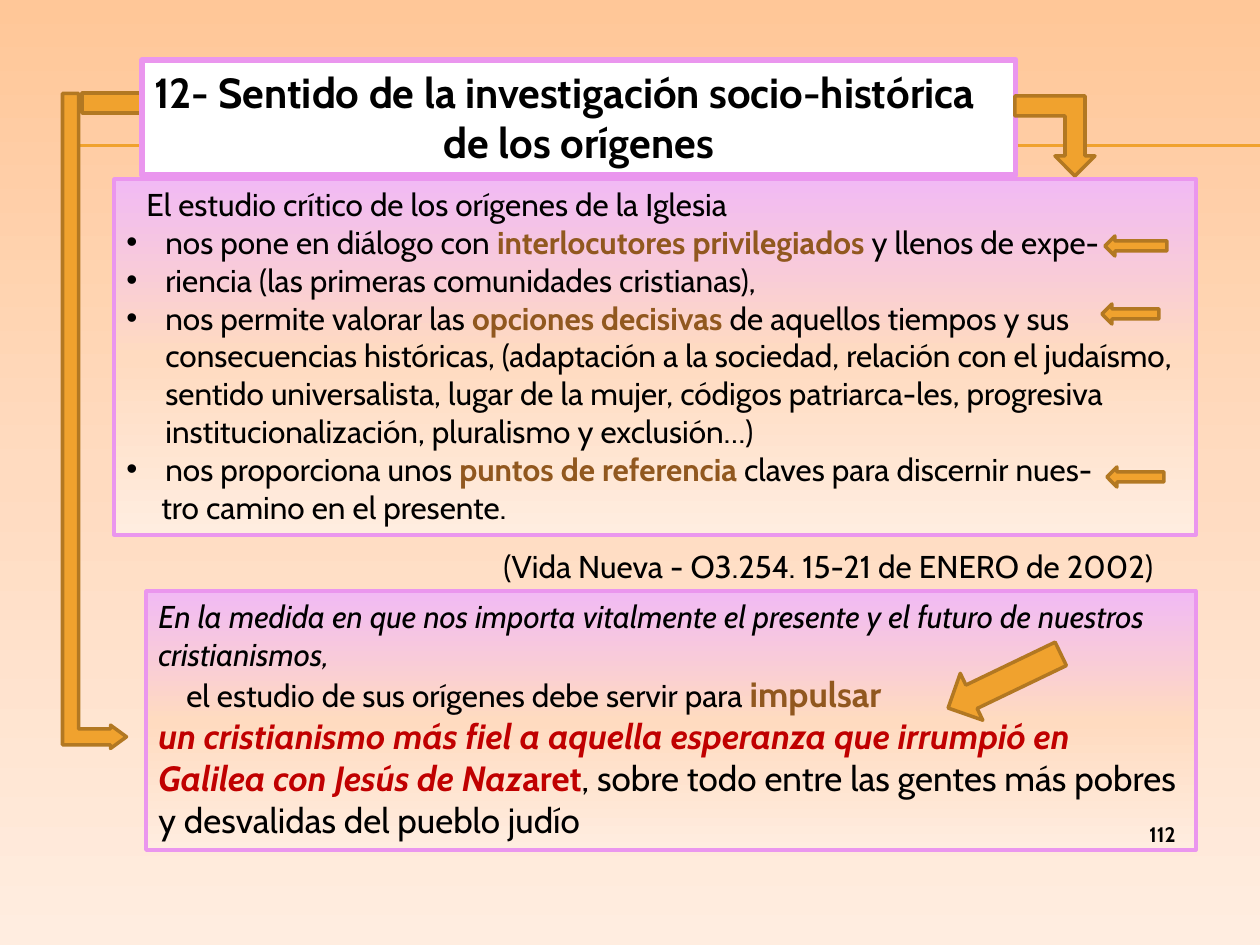
from copy import deepcopy
from dataclasses import dataclass

from lxml import etree
from pptx import Presentation
from pptx.dml.color import RGBColor
from pptx.enum.shapes import MSO_CONNECTOR, MSO_SHAPE
from pptx.enum.text import MSO_ANCHOR, PP_ALIGN
from pptx.oxml.ns import qn
from pptx.util import Pt

PX = 914400 // 126
RECT, LEFT = MSO_SHAPE.RECTANGLE, MSO_SHAPE.LEFT_ARROW
BENT, BENT_UP = MSO_SHAPE.BENT_ARROW, MSO_SHAPE.BENT_UP_ARROW
STRAIGHT = MSO_CONNECTOR.STRAIGHT
START, MIDDLE, END = PP_ALIGN.LEFT, PP_ALIGN.CENTER, PP_ALIGN.RIGHT
TOP = MSO_ANCHOR.TOP
FONT = "Cabin"
COLORS = {
    "ink": "000000", "white": "FFFFFF", "brown": "91581F", "red": "C00000",
    "gold": "F0A22E", "bronze": "B27822", "pink": "EA96EE",
}
PAGE = ("FFC798", "FFDBC0", "FFEDE0")
PANEL = ("F1BAF4", "FFDBC0", "FFEDE0")


@dataclass
class Arrow:
    kind: int
    box: tuple[int, int, int, int]
    turn: float = 0
    adjust: tuple[float, ...] = ()


@dataclass
class Para:
    runs: list[tuple[str, dict]]
    align: int = START
    indent: int = 0
    bullet: bool = False


ARROWS = [
    Arrow(BENT_UP, (-233, 389, 655, 64), 90, (0.25, 0.182, 0.25)),
    Arrow(BENT, (1015, 96, 80, 80), 90, (0.25, 0.25, 0.25, 0)),
    Arrow(LEFT, (1105, 236, 62, 20)),
    Arrow(LEFT, (1102, 304, 57, 20)),
    Arrow(LEFT, (1107, 467, 57, 20)),
    Arrow(LEFT, (942, 655, 125, 52), 334.3),
]

KEY = {"color": "brown", "bold": True}
TITLE = {"size": 24, "bold": True}
HOPE = {"size": 20, "color": "red", "bold": True}


def point(*runs: tuple[str, dict]) -> Para:
    return Para(list(runs), indent=39, bullet=True)


STUDY = [
    Para([("El estudio crítico de los orígenes de la Iglesia", {})], indent=20),
    point(("nos pone en diálogo con ", {}),
          ("interlocutores privilegiados ", KEY),
          ("y llenos de expe-", {})),
    point(("riencia (las primeras comunidades cristianas),", {})),
    point(("nos permite valorar las ", {}),
          ("opciones decisivas ", KEY),
          ("de aquellos tiempos y sus consecuencias históricas, (adaptación "
           "a la sociedad, relación con el judaísmo, sentido universalista, "
           "lugar de la mujer, códigos patriarca-les, progresiva "
           "institucionalización, pluralismo y exclusión…)", {})),
    point(("nos proporciona unos ", {}),
          ("puntos de referencia ", KEY),
          ("claves para discernir nues-", {})),
    Para([("tro camino en el presente.", {})], indent=35),
]
CLOSING = [
    Para([("En la medida en que nos importa vitalmente el presente y el futuro "
           "de nuestros cristianismos,", {"italic": True})]),
    Para([("el estudio de sus orígenes debe servir para ", {}),
          ("impulsar", KEY | {"size": 20})], indent=28),
    Para([("un cristianismo más fiel a aquella esperanza que irrumpió en "
           "Galilea con Jesús de Naz", HOPE | {"italic": True}),
          ("aret", HOPE),
          (", sobre todo entre las gentes más pobres y desvalidas del pueblo "
           "judío", {"size": 20})]),
]
HEADING = [
    Para([("12- Sentido de la investigación socio-histórica", TITLE)]),
    Para([("de los orígenes", TITLE)], MIDDLE),
]
SOURCE = [Para([("(Vida Nueva - O3.254. 15-21 de ENERO de 2002)", {})])]
NUMBER = [Para([("112", {"size": 12, "bold": True})], END)]


def rgb(name: str) -> RGBColor:
    return RGBColor.from_string(COLORS[name])


def scale(box: tuple[int, ...]) -> list[int]:
    return [n * PX for n in box]


def shade(fill, stops: tuple[str, str, str]) -> None:
    """Fill from top to bottom through three evenly spaced colours."""
    fill.gradient()
    fill.gradient_angle = 270
    first = fill.gradient_stops[0]._gs
    first.addnext(deepcopy(first))
    for n, (stop, color) in enumerate(zip(fill.gradient_stops, stops)):
        stop.position = n / 2
        stop.color.rgb = RGBColor.from_string(color)


def add_run(para, text: str, *, size: int = 18, color: str = "ink",
            bold: bool = False, italic: bool = False) -> None:
    run = para.add_run()
    run.text = text
    font = run.font
    font.name, font.size = FONT, Pt(size)
    font.bold, font.italic = bold, italic
    font.color.rgb = rgb(color)


def write(shape, paras: list[Para]) -> None:
    frame = shape.text_frame
    frame.word_wrap = True
    frame.vertical_anchor = TOP
    for n, item in enumerate(paras):
        para = frame.add_paragraph() if n else frame.paragraphs[0]
        para.alignment = item.align
        props = para._p.get_or_add_pPr()
        if item.indent:
            props.set("marL", str(item.indent * PX))
            props.set("indent", str(-item.indent * PX if item.bullet else 0))
        if item.bullet:
            etree.SubElement(props, qn("a:buFont")).set("typeface", "Arial")
            etree.SubElement(props, qn("a:buChar")).set("char", "•")
        for text, style in item.runs:
            add_run(para, text, **style)


def add_form(slide, kind: int, box: tuple[int, int, int, int], *,
             fill: str | tuple = "gold", line: str = "bronze",
             width: int = 2):
    shape = slide.shapes.add_shape(kind, *scale(box))
    shape.shadow.inherit = False
    if isinstance(fill, tuple):
        shade(shape.fill, fill)
    else:
        shape.fill.solid()
        shape.fill.fore_color.rgb = rgb(fill)
    shape.line.color.rgb = rgb(line)
    shape.line.width = Pt(width)
    return shape


def add_arrow(slide, arrow: Arrow) -> None:
    shape = add_form(slide, arrow.kind, arrow.box)
    shape.rotation = arrow.turn
    for n, value in enumerate(arrow.adjust):
        shape.adjustments[n] = value


def add_rule(slide, y: int) -> None:
    rule = slide.shapes.add_connector(STRAIGHT, *scale((71, y, 1260, y)))
    rule.line.color.rgb = rgb("gold")
    rule.line.width = Pt(0.75)
    etree.SubElement(rule._element.spPr, qn("a:effectLst"))


def main() -> None:
    deck = Presentation()
    deck.slide_width, deck.slide_height = scale((1260, 945))
    slide = deck.slides.add_slide(deck.slide_layouts[6])
    shade(slide.background.fill, PAGE)
    for y in (145, 146):
        add_rule(slide, y)
    add_form(slide, RECT, (82, 93, 64, 20))
    write(add_form(slide, RECT, (146, 591, 1050, 259), fill=PANEL,
                   line="pink"), CLOSING)
    write(slide.shapes.add_textbox(*scale((491, 541, 714, 50))), SOURCE)
    write(add_form(slide, RECT, (114, 179, 1082, 356), fill=PANEL,
                   line="pink"), STUDY)
    write(add_form(slide, RECT, (142, 60, 874, 115), fill="white",
                   line="pink", width=3), HEADING)
    for arrow in ARROWS:
        add_arrow(slide, arrow)
    write(slide.shapes.add_textbox(*scale((1083, 815, 105, 34))), NUMBER)
    deck.save("out.pptx")


if __name__ == "__main__":
    main()
